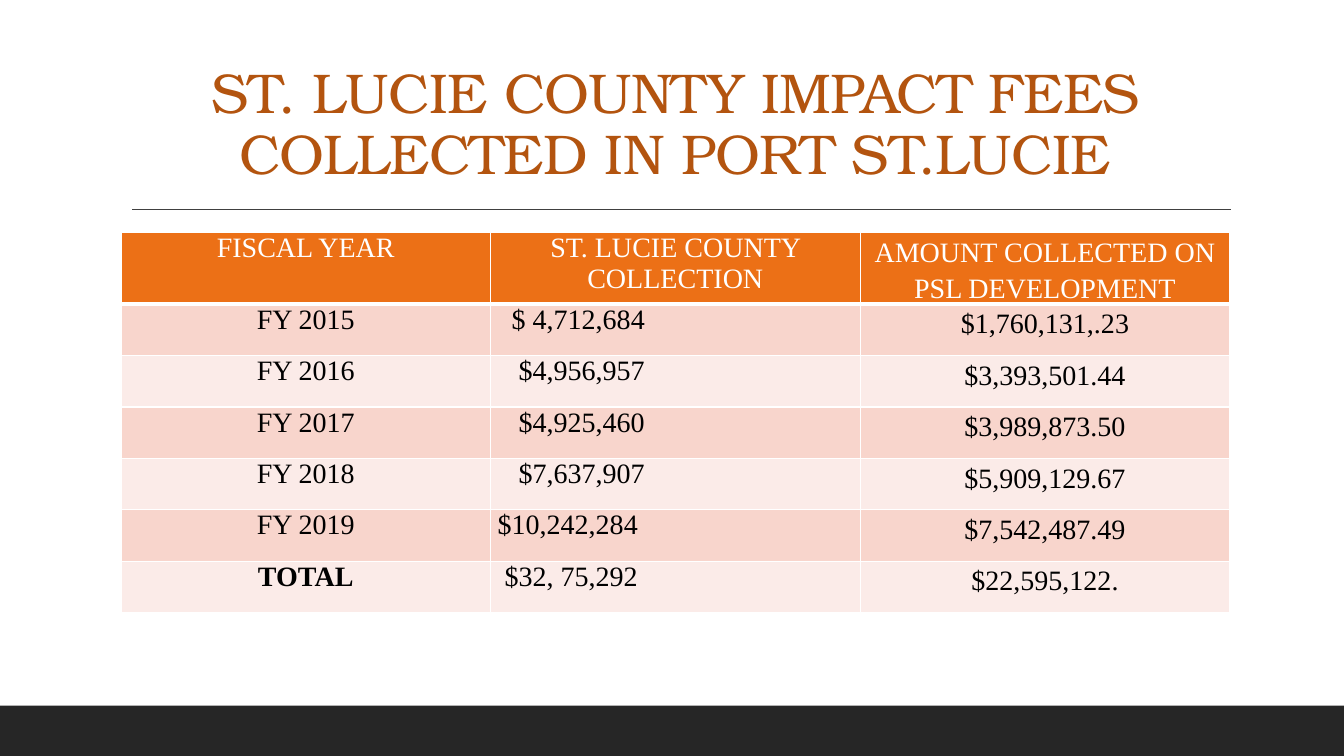
import dataclasses

import pptx
import pptx.dml.color
import pptx.enum.shapes
import pptx.enum.text
import pptx.oxml
import pptx.oxml.ns
import pptx.util

ALIGN = pptx.enum.text.PP_ALIGN
SLIDE_WIDTH = pptx.util.Inches(13.33)
SLIDE_HEIGHT = pptx.util.Inches(7.5)


@dataclasses.dataclass(frozen=True)
class Theme:
    title_font: str = "TeX Gyre Bonum"
    table_font: str = "Times New Roman"
    title_size: int = 40
    table_size: int = 20
    title: str = "B3540F"
    header: str = "EC7016"
    bands: tuple = ("F8D5CC", "FBEBE8")
    light: str = "FFFFFF"
    dark: str = "000000"
    rule: str = "404040"
    footer: str = "262626"


THEME = Theme()

HEADINGS = ("FISCAL YEAR", "ST. LUCIE COUNTY COLLECTION",
            "AMOUNT COLLECTED ON PSL DEVELOPMENT")
# Year, county collection, amount on PSL development
FEES = (
    ("FY 2015", "$ 4,712,684", "$1,760,131,.23"),
    ("FY 2016", "$4,956,957", "$3,393,501.44"),
    ("FY 2017", "$4,925,460", "$3,989,873.50"),
    ("FY 2018", "$7,637,907", "$5,909,129.67"),
    ("FY 2019", "$10,242,284", "$7,542,487.49"),
    ("TOTAL", "$32, 75,292", "$22,595,122."),
)
COLLECTION_INDENTS = (10, 15, 15, 15, 0, 5)  # points, one per fee row


def across(percent):
    return round(SLIDE_WIDTH * percent / 100)


def down(percent):
    return round(SLIDE_HEIGHT * percent / 100)


def box(left, top, width, height):
    """Turn percentages of the slide into a position and a size."""
    return across(left), down(top), across(width), down(height)


def color(value):
    return pptx.dml.color.RGBColor.from_string(value)


def style_run(run, font, size, value, bold=False):
    run.font.name = font
    run.font.size = pptx.util.Pt(size)
    run.font.bold = bold
    run.font.color.rgb = color(value)


def add_footer_band(slide):
    band = slide.shapes.add_shape(
        pptx.enum.shapes.MSO_SHAPE.RECTANGLE, *box(0, 93.33, 100, 6.67))
    band.shadow.inherit = False
    band.fill.solid()
    band.fill.fore_color.rgb = color(THEME.footer)
    band.line.fill.background()


def add_title_rule(slide):
    rule = slide.shapes.add_connector(
        pptx.enum.shapes.MSO_CONNECTOR.STRAIGHT,
        across(9.83), down(27.73), across(91.6), down(27.73))
    rule.line.color.rgb = color(THEME.rule)
    rule.line.width = pptx.util.Pt(1)
    properties = rule.element.find(pptx.oxml.ns.qn("p:spPr"))
    properties.append(pptx.oxml.parse_xml(
        f'<a:effectLst {pptx.oxml.ns.nsdecls("a")}/>'))


def fill_title(slide, text):
    title = slide.shapes.title
    title.left, title.top, title.width, title.height = box(9, 4.13, 82.5, 21.2)
    frame = title.text_frame
    frame.text = text
    frame.word_wrap = True
    frame.auto_size = pptx.enum.text.MSO_AUTO_SIZE.NONE
    frame.vertical_anchor = pptx.enum.text.MSO_ANCHOR.BOTTOM
    paragraph = frame.paragraphs[0]
    paragraph.alignment = ALIGN.CENTER
    paragraph.line_spacing = 0.9
    run = paragraph.runs[0]
    style_run(run, THEME.title_font, THEME.title_size, THEME.title)
    run.font._element.set("spc", "-50")


def add_borders(cell, bottom_width):
    properties = cell._tc.get_or_add_tcPr()
    for side, width in (("L", 1), ("R", 1), ("T", 1), ("B", bottom_width)):
        properties.append(pptx.oxml.parse_xml(
            f'<a:ln{side} {pptx.oxml.ns.nsdecls("a")} w="{pptx.util.Pt(width)}">'
            f'<a:solidFill><a:srgbClr val="{THEME.light}"/></a:solidFill>'
            f'</a:ln{side}>'))


def fill_cell(cell, text, fill, ink, alignment=ALIGN.CENTER, spacing=1.0,
              indent=0, bold=False, bottom_width=1):
    add_borders(cell, bottom_width)
    cell.fill.solid()
    cell.fill.fore_color.rgb = color(fill)
    cell.margin_left = cell.margin_right = pptx.util.Inches(0.07)
    cell.margin_top = cell.margin_bottom = 0
    cell.text_frame.text = text
    paragraph = cell.text_frame.paragraphs[0]
    paragraph.alignment = alignment
    paragraph.line_spacing = spacing
    if indent:
        paragraph._p.get_or_add_pPr().set("marL", str(pptx.util.Pt(indent)))
    style_run(paragraph.runs[0], THEME.table_font, THEME.table_size, ink, bold)


def add_fee_table(slide):
    frame = slide.shapes.add_table(
        len(FEES) + 1, len(HEADINGS), *box(9, 30.8, 82.5, 50.27))
    table = frame.table
    table.first_row = table.horz_banding = False
    for row in table.rows:
        row.height = down(6.8)
    frame.height = down(50.27)  # the two-line header grows past its row

    spacings = (1.0, 1.0, 1.15)
    for column, heading in enumerate(HEADINGS):
        fill_cell(table.cell(0, column), heading, THEME.header, THEME.light,
                  spacing=spacings[column], bottom_width=3)
    for index, (fees, indent) in enumerate(zip(FEES, COLLECTION_INDENTS)):
        for column, text in enumerate(fees):
            collection = column == 1
            fill_cell(table.cell(index + 1, column), text,
                      THEME.bands[index % 2], THEME.dark,
                      alignment=ALIGN.LEFT if collection else ALIGN.CENTER,
                      spacing=spacings[column],
                      indent=indent if collection else 0,
                      bold=text == "TOTAL")


def main():
    presentation = pptx.Presentation()
    presentation.slide_width = SLIDE_WIDTH
    presentation.slide_height = SLIDE_HEIGHT
    slide = presentation.slides.add_slide(presentation.slide_layouts[5])
    add_footer_band(slide)
    add_title_rule(slide)
    fill_title(slide, "ST. LUCIE COUNTY IMPACT FEES COLLECTED IN PORT ST.LUCIE")
    add_fee_table(slide)
    presentation.save("out.pptx")


if __name__ == "__main__":
    main()
